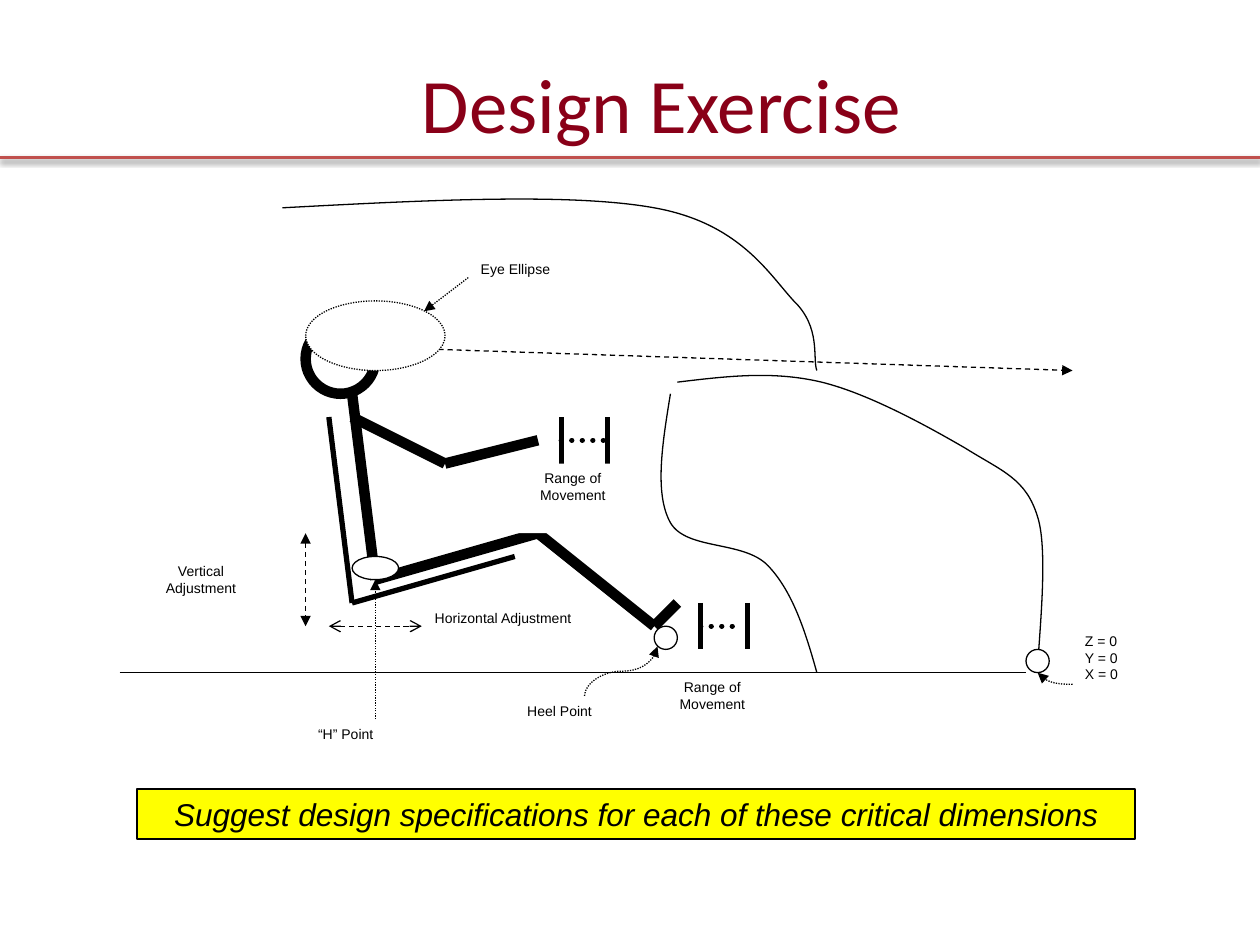
import dataclasses

import lxml.etree
import pptx
import pptx.dml.color
import pptx.enum.dml
import pptx.enum.shapes
import pptx.enum.text
import pptx.oxml
import pptx.oxml.ns
import pptx.util

Inches = pptx.util.Inches
Pt = pptx.util.Pt
RGBColor = pptx.dml.color.RGBColor
Align = pptx.enum.text.PP_ALIGN
Anchor = pptx.enum.text.MSO_ANCHOR
Dash = pptx.enum.dml.MSO_LINE
Connector = pptx.enum.shapes.MSO_CONNECTOR
qn = pptx.oxml.ns.qn

BLACK = RGBColor(0, 0, 0)
WHITE = RGBColor(255, 255, 255)
YELLOW = RGBColor(255, 255, 0)
MAROON = RGBColor(0x89, 0x00, 0x18)
RED = RGBColor(0xC0, 0x50, 0x4D)
GRID_COLUMNS = 45
THIN, MEDIUM, THICK = 0.75, 3, 6


@dataclasses.dataclass
class Box:
    """A region in inches whose width is split into square grid cells."""
    left: float
    top: float
    width: float
    height: float

    def place(self, column, row):
        """Return the slide position of a grid point."""
        unit = self.width / GRID_COLUMNS
        return Inches(self.left + column * unit), Inches(self.top + row * unit)

    def area(self, column, row, columns, rows):
        """Return left, top, width and height of a block of cells."""
        left, top = self.place(column, row)
        right, bottom = self.place(column + columns, row + rows)
        return left, top, right - left, bottom - top


def apply(target, formats):
    """Set each attribute of the target from the format values."""
    for name, value in formats.items():
        setattr(target, name, value)


def style_line(line, weight, dash=None, color=BLACK):
    """Set colour, weight and dash of an outline."""
    line.color.rgb = color
    apply(line, {"width": Pt(weight), "dash_style": dash})


def write(shape, text, font, alignment=Align.LEFT, anchor=Anchor.TOP):
    """Write text with one paragraph a line into a shape."""
    frame = shape.text_frame
    frame.text = text
    apply(frame, {"word_wrap": True, "vertical_anchor": anchor})
    for paragraph in frame.paragraphs:
        paragraph.alignment = alignment
        apply(paragraph.font, {key: value for key, value in font.items() if key != "color"})
        paragraph.font.color.rgb = font["color"]


def finish_connector(connector, weight, dash=None, color=BLACK, head=None, tail=None):
    """Style a connector and return its new empty effect list."""
    style_line(connector.line, weight, dash, color)
    outline = connector.line._get_or_add_ln()
    for tag, arrow in (("a:headEnd", head), ("a:tailEnd", tail)):
        if arrow:
            lxml.etree.SubElement(outline, qn(tag), type=arrow)
    return lxml.etree.SubElement(connector._element.spPr, qn("a:effectLst"))


def add_line(group, box, points, weight=THIN, **style):
    """Join two grid points with a straight connector."""
    begin, end = points
    connector = group.shapes.add_connector(Connector.STRAIGHT, *box.place(*begin), *box.place(*end))
    finish_connector(connector, weight, **style)
    return connector


def add_curved_pointer(group, box, begin, end, preset, rotation):
    """Join two grid points with a turned curved connector."""
    center = [(first + last) / 2 for first, last in zip(begin, end)]
    half = [abs(first - last) / 2 for first, last in zip(begin, end)]
    if rotation % 180:
        half.reverse()
    corners = [(center[0] + sign * half[0], center[1] + sign * half[1]) for sign in (-1, 1)]
    connector = group.shapes.add_connector(
        Connector.CURVE, *box.place(*corners[0]), *box.place(*corners[1]))
    properties = connector._element.spPr
    properties.find(qn("a:xfrm")).set("rot", str(rotation * 60000))
    properties.find(qn("a:prstGeom")).set("prst", preset)
    finish_connector(connector, THIN, Dash.ROUND_DOT, tail="triangle")


def add_ellipse(group, box, area, weight=THIN, dash=None):
    """Draw a white ellipse over a block of cells."""
    ellipse = group.shapes.add_shape(
        pptx.enum.shapes.MSO_SHAPE.OVAL, *box.area(*area))
    ellipse.shadow.inherit = False
    ellipse.fill.solid()
    ellipse.fill.fore_color.rgb = WHITE
    style_line(ellipse.line, weight, dash)


def add_label(group, box, area, text, alignment=Align.LEFT):
    """Place a small white label over a block of cells."""
    label = group.shapes.add_textbox(*box.area(*area))
    label.fill.solid()
    label.fill.fore_color.rgb = WHITE
    write(label, text, {"name": "Arial", "size": Pt(8), "color": BLACK}, alignment)


def add_curve(group, box, points):
    """Draw a chain of cubic curves, three further points to each."""
    places = [box.place(*point) for point in points]
    builder = group.shapes.build_freeform(*places[0])
    builder.add_line_segments(places[1:], close=False)
    shape = builder.convert_to_shape()
    shape.shadow.inherit = False
    shape.fill.background()
    style_line(shape.line, THIN)
    segments = list(shape._element.iter(qn("a:lnTo")))
    outline = segments[0].getparent()
    for start in range(0, len(segments), 3):
        curve = lxml.etree.SubElement(outline, qn("a:cubicBezTo"))
        for segment in segments[start:start + 3]:
            curve.append(segment[0])
            outline.remove(segment)


def build_driver(group, box):
    """Draw the driver and the seat."""
    limbs = [((10, 8), (11, 16)), ((11, 16), (18, 14)), ((23, 18), (24, 17)),
             ((18, 14), (23, 18)), ((14, 11), (18, 10)), ((10, 9), (14, 11))]
    for limb in limbs:
        add_line(group, box, limb, THICK)
    add_ellipse(group, box, (8, 5, 3, 3), THICK)
    for seat in [((9, 9), (10, 17)), ((10, 17), (17, 15))]:
        add_line(group, box, seat, MEDIUM)


def build_controls(group, box):
    """Draw the hand and foot movement ranges."""
    for column, row, reach in [(19, 9, 2), (25, 17, 1.7)]:
        for stop in (column, column + 2):
            add_line(group, box, ((stop, row), (stop, row + 2)), MEDIUM)
        travel = add_line(group, box, ((column, row + 1), (column + reach, row + 1)),
                          MEDIUM, dash=Dash.ROUND_DOT)
        travel.line._get_or_add_ln().set("cap", "rnd")


def build_adjustments(group, box):
    """Draw the sight line, the seat adjustments and the centred labels."""
    add_line(group, box, ((11, 6), (41, 7)), dash=Dash.DASH, tail="triangle")
    for points, arrow in [(((8, 14), (8, 18)), "triangle"), (((9, 18), (13, 18)), "arrow")]:
        add_line(group, box, points, dash=Dash.DASH, head=arrow, tail=arrow)
    for column, row, text in [(13, 17, "Horizontal Adjustment"), (0, 15, "Vertical\nAdjustment"),
                              (22, 20, "Range of\nMovement"), (16, 11, "Range of\nMovement")]:
        add_label(group, box, (column, row, 7, 3), text, Align.CENTER)


def build_vehicle(group, box):
    """Draw the ground and the outlines of hood, firewall and roof."""
    add_line(group, box, ((0, 20), (39, 20)))
    hood = [(24, 7.5), (26.1, 7.25), (28.1, 7), (30.2, 7.5), (32.25, 8), (34.85, 9.45),
            (36.4, 10.35), (38, 11.35), (39, 11.65), (39.5, 13.3), (40, 14.85),
            (39.5, 18.9), (39.5, 20)]
    firewall = [(23.7, 8), (23.35, 10.15), (23, 12.3), (23.7, 13.55), (24.4, 14.75),
                (26.85, 14.3), (27.9, 15.4), (28.95, 16.5), (29.5, 18.2), (30, 20)]
    roof = [(7, 0), (13.2, -0.33), (19.4, -0.65), (23, 0), (26.65, 0.65), (27.9, 2.8),
            (29, 4), (30.2, 5.15), (29.8, 6.5), (30, 7)]
    for outline in (hood, firewall, roof):
        add_curve(group, box, outline)


def build_reference_points(group, box):
    """Mark and name the hip, eye, origin and heel points."""
    for area, text in [((8, 22, 6, 2), "“H” Point"), ((15, 2, 6, 2), "Eye Ellipse"),
                       ((41, 18, 4, 5), "Z = 0\nY = 0\nX = 0"), ((17, 21, 6, 2), "Heel Point")]:
        add_label(group, box, area, text)
    for area in [(10, 15, 2, 1), (39, 19, 1, 1), (23, 18, 1, 1)]:
        add_ellipse(group, box, area)
    add_ellipse(group, box, (8, 4, 6, 3), dash=Dash.ROUND_DOT)
    for points in [((11, 22), (11, 16)), ((15, 3), (13.1, 4.45))]:
        add_line(group, box, points, dash=Dash.ROUND_DOT, tail="triangle")
    add_curved_pointer(group, box, (41, 20.5), (39.5, 20), "curvedConnector2", 180)
    add_curved_pointer(group, box, (20, 21), (23.14, 18.87), "curvedConnector3", 270)


def build_banner(slide, box):
    """Place the yellow task banner."""
    banner = slide.shapes.add_textbox(*map(Inches, dataclasses.astuple(box)))
    banner.fill.solid()
    banner.fill.fore_color.rgb = YELLOW
    style_line(banner.line, 1)
    write(banner, "Suggest design specifications for each of these critical dimensions",
          {"name": "Arial", "size": Pt(18), "italic": True, "color": BLACK}, Align.CENTER)
    banner.text_frame.auto_size = pptx.enum.text.MSO_AUTO_SIZE.SHAPE_TO_FIT_TEXT


def build_title(slide, box, rule_width):
    """Format the title and draw the shadowed rule under it."""
    title = slide.shapes.title
    apply(title, dict(zip(("left", "top", "width", "height"),
                          map(Inches, dataclasses.astuple(box)))))
    write(title, "Design Exercise", {"name": "Calibri", "size": Pt(44), "color": MAROON},
          Align.CENTER, Anchor.MIDDLE)
    height = Inches(box.top + box.height)
    rule = slide.shapes.add_connector(Connector.STRAIGHT, 0, height, rule_width, height)
    effects = finish_connector(rule, 2, color=RED)
    shadow = lxml.etree.SubElement(effects, qn("a:outerShdw"), blurRad=str(Pt(3.1)),
                                   dist=str(Pt(1.6)), dir="5400000", rotWithShape="0")
    color = lxml.etree.SubElement(shadow, qn("a:srgbClr"), val="000000")
    lxml.etree.SubElement(color, qn("a:alpha"), val="38000")


def main():
    """Build and save the slide."""
    presentation = pptx.Presentation()
    apply(presentation, {"slide_width": Inches(10), "slide_height": Inches(7.5)})
    slide = presentation.slides.add_slide(presentation.slide_layouts[5])
    diagram = Box(0.95, 1.65, 8.3, 4.43)
    group = slide.shapes.add_group_shape()
    for build in (build_driver, build_controls, build_adjustments,
                  build_vehicle, build_reference_points):
        build(group, diagram)
    build_banner(slide, Box(1.09, 6.26, 7.92, 0.4))
    build_title(slide, Box(1, 0.38, 8.5, 0.87), presentation.slide_width)
    presentation.save("out.pptx")


if __name__ == "__main__":
    main()
